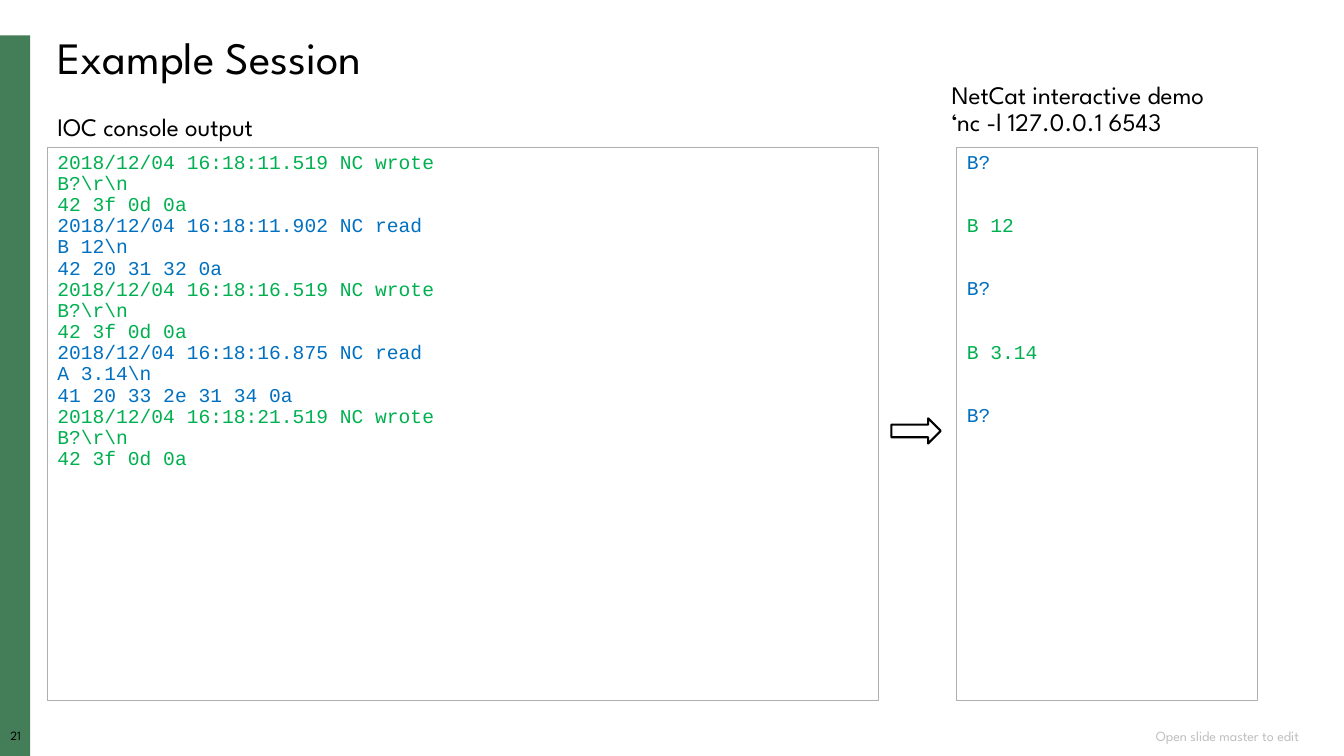
from dataclasses import dataclass

from pptx import Presentation
from pptx.dml.color import RGBColor
from pptx.enum.shapes import MSO_SHAPE as Shape
from pptx.enum.text import MSO_ANCHOR as Anchor, MSO_AUTO_SIZE as AutoSize, PP_ALIGN as Align
from pptx.util import Emu, Pt

PX = 9144
SANS = "League Spartan"
MONO = "Courier New"
TITLE_ONLY = 5
REPLY_GAP = 30.2
COLORS = {
    "black": "000000",
    "band": "447E59",
    "border": "AEB0AF",
    "muted": "BFBFBF",
    "wrote": "00B050",
    "read": "0070C0",
}


@dataclass(frozen=True)
class Area:
    left: int
    top: int
    width: int
    height: int

    def emu(self) -> tuple[Emu, ...]:
        return tuple(Emu(side * PX) for side in (self.left, self.top, self.width, self.height))


@dataclass(frozen=True)
class Line:
    text: str
    color: str = "black"


@dataclass(frozen=True)
class Style:
    font: str = SANS
    size: int = 18
    align: Align = Align.LEFT
    anchor: Anchor = Anchor.TOP
    gap: float = 0
    spacing: float = 0.9
    inset: bool = True


@dataclass(frozen=True)
class Label:
    area: Area
    lines: list[Line]
    style: Style = Style()


@dataclass(frozen=True)
class Message:
    kind: str
    time: str
    text: str
    codes: str

    def lines(self) -> list[Line]:
        heading = f"2018/12/04 {self.time} NC {self.kind}"
        return [Line(text, self.kind) for text in (heading, self.text, self.codes)]


def rgb(name: str) -> RGBColor:
    return RGBColor.from_string(COLORS[name])


def write(box, lines: list[Line], style: Style) -> None:
    frame = box.text_frame
    frame.word_wrap = True
    frame.auto_size = AutoSize.NONE
    frame.vertical_anchor = style.anchor
    if not style.inset:
        frame.margin_left = frame.margin_right = frame.margin_top = frame.margin_bottom = 0
    for index, line in enumerate(lines):
        para = frame.add_paragraph() if index else frame.paragraphs[0]
        para.text = line.text
        para.alignment = style.align
        para.line_spacing = style.spacing
        para.space_before = Pt(style.gap if index else 0)
        para.font.name = style.font
        para.font.size = Pt(style.size)
        para.font.color.rgb = rgb(line.color)


def add_label(page, label: Label) -> None:
    write(page.shapes.add_textbox(*label.area.emu()), label.lines, label.style)


def add_block(page, kind: Shape, area: Area, fill: str = "", line: str = "", weight: float = 0.75):
    block = page.shapes.add_shape(kind, *area.emu())
    block.shadow.inherit = False
    if fill:
        block.fill.solid()
        block.fill.fore_color.rgb = rgb(fill)
    else:
        block.fill.background()
    if line:
        block.line.color.rgb = rgb(line)
        block.line.width = Pt(weight)
    else:
        block.line.fill.background()
    return block


def add_panel(page, panel: Label) -> None:
    write(add_block(page, Shape.RECTANGLE, panel.area, line="border"), panel.lines, panel.style)


MESSAGES = [
    Message("wrote", "16:18:11.519", r"B?\r\n", "42 3f 0d 0a"),
    Message("read", "16:18:11.902", r"B 12\n", "42 20 31 32 0a"),
    Message("wrote", "16:18:16.519", r"B?\r\n", "42 3f 0d 0a"),
    Message("read", "16:18:16.875", r"A 3.14\n", "41 20 33 2e 31 34 0a"),
    Message("wrote", "16:18:21.519", r"B?\r\n", "42 3f 0d 0a"),
]
NETCAT_LINES = [
    Line("B?", "read"),
    Line("B 12", "wrote"),
    Line("B?", "read"),
    Line("B 3.14", "wrote"),
    Line("B?", "read"),
]
PANELS = [
    Label(Area(949, 146, 298, 549), NETCAT_LINES, Style(MONO, 14, gap=REPLY_GAP)),
    Label(
        Area(47, 146, 824, 549),
        [line for message in MESSAGES for line in message.lines()],
        Style(MONO, 14),
    ),
]
LABELS = [
    Label(Area(47, 109, 260, 37), [Line("IOC console output")]),
    Label(
        Area(934, 77, 329, 65),
        [Line("NetCat interactive demo"), Line("‘nc -l 127.0.0.1 6543")],
    ),
    Label(Area(0, 724, 31, 17), [Line("21")], Style(size=9, align=Align.CENTER, inset=False)),
    Label(
        Area(876, 720, 422, 20),
        [Line("Open slide master to edit", "muted")],
        Style(size=10, align=Align.RIGHT, anchor=Anchor.MIDDLE, spacing=1.0),
    ),
]


def main() -> None:
    deck = Presentation()
    deck.slide_width = Emu(1333 * PX)
    deck.slide_height = Emu(750 * PX)
    page = deck.slides.add_slide(deck.slide_layouts[TITLE_ONLY])

    title = page.shapes.title
    title.left, title.top, title.width, title.height = Area(47, 30, 1250, 59).emu()
    write(title, [Line("Example Session")], Style(size=32, anchor=Anchor.MIDDLE))

    add_block(page, Shape.RECTANGLE, Area(0, 35, 30, 715), fill="band")
    for panel in PANELS:
        add_panel(page, panel)
    for label in LABELS:
        add_label(page, label)
    add_block(page, Shape.RIGHT_ARROW, Area(884, 415, 49, 25), line="black", weight=1.5)

    deck.save("out.pptx")


if __name__ == "__main__":
    main()
